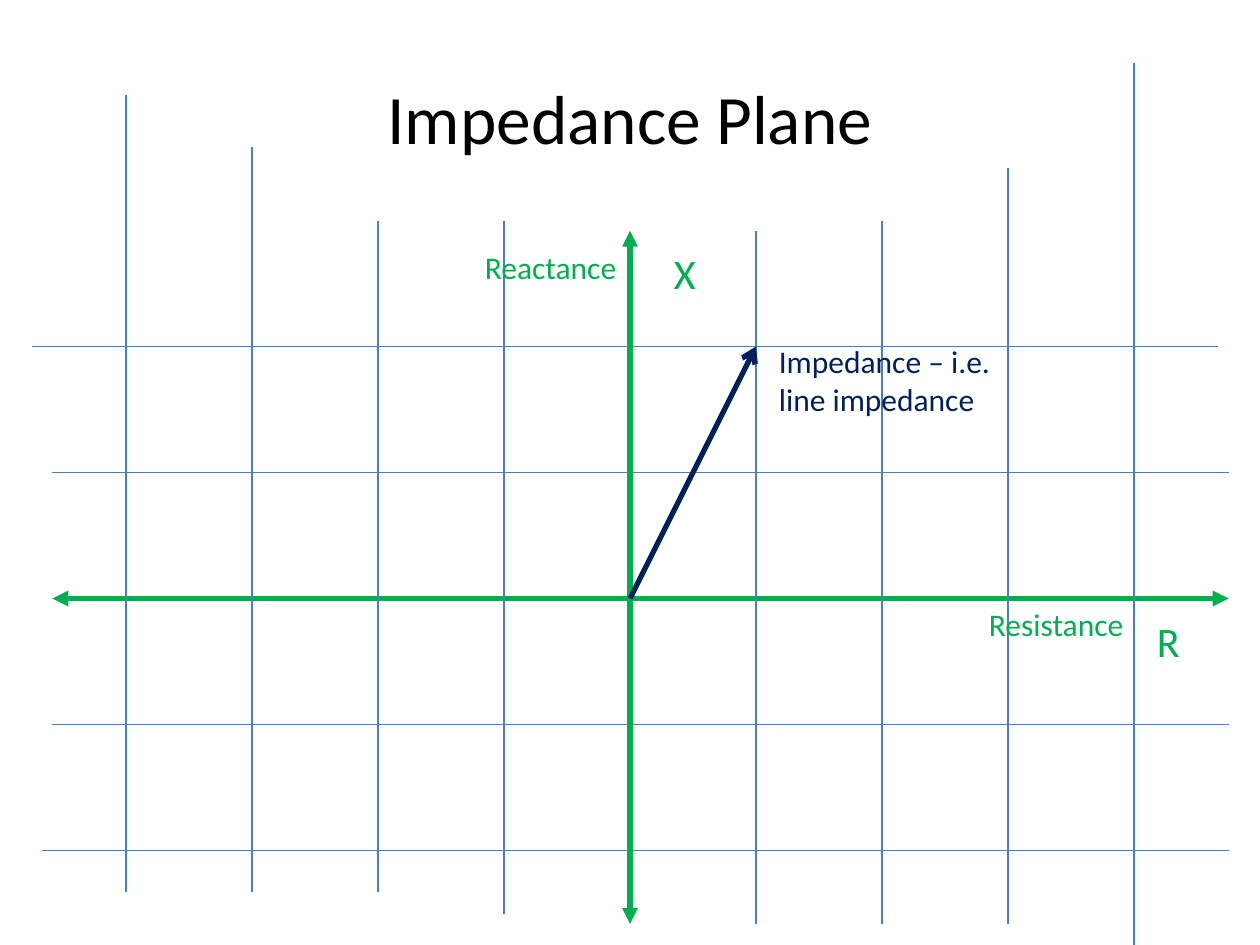
from lxml import etree
from pptx import Presentation
from pptx.dml.color import RGBColor
from pptx.enum import shapes, text
from pptx.oxml import ns
from pptx.util import Pt

GREEN, BLUE, NAVY, BLACK = "00B050", "4B7EBC", "002060", "000000"
CELL = 72
ORIGIN_X, ORIGIN_Y = 5 * CELL, 4.75 * CELL

presentation = Presentation()
presentation.slide_width, presentation.slide_height = Pt(720), Pt(540)
slide = presentation.slides.add_slide(presentation.slide_layouts[6])


def color(hex_string):
    return RGBColor.from_string(hex_string)


def add_line(start, end, line_color, width, **arrowheads):
    """Draw a straight line; arrowheads maps headEnd / tailEnd to a type."""
    line = slide.shapes.add_connector(
        shapes.MSO_CONNECTOR.STRAIGHT, *map(Pt, (*start, *end)))
    line.line.color.rgb = color(line_color)
    line.line.width = Pt(width)
    outline = line.line._get_or_add_ln()
    for tag, kind in arrowheads.items():
        etree.SubElement(outline, ns.qn(f"a:{tag}"), type=kind)
    etree.SubElement(line._element.spPr, ns.qn("a:effectLst"))


axis_style = dict(line_color=GREEN, width=3, headEnd="triangle", tailEnd="triangle")
grid_style = dict(line_color=BLUE, width=0.75)

# Horizontal lines, one cell apart: left and right ends
row_ends = [(18, 696), (30, 702), (30, 702), (30, 702), (24, 702)]
for row, (left, right) in enumerate(row_ends):
    y = ORIGIN_Y + (row - 2) * CELL
    add_line((right, y), (left, y), **(axis_style if y == ORIGIN_Y else grid_style))

# Vertical lines, one cell apart: top and bottom ends
column_ends = [(54, 510), (84, 510), (126, 510), (126, 522), (132, 528),
               (132, 528), (126, 528), (96, 528), (36, 540)]
for column, (top, bottom) in enumerate(column_ends, start=1):
    x = column * CELL
    add_line((x, top), (x, bottom), **(axis_style if x == ORIGIN_X else grid_style))

# Impedance vector: one cell right, two cells up
add_line((ORIGIN_X, ORIGIN_Y), (ORIGIN_X + CELL, ORIGIN_Y - 2 * CELL),
         NAVY, 3, tailEnd="arrow")

# Text, left, top, width, height, size, color
labels = [
    ("Impedance Plane", 210, 21.6, 300, 90, 39.6, BLACK),
    ("R", 654, 348, 30, 36, 24, GREEN),
    ("X", 378, 138, 30, 36, 24, GREEN),
    ("Resistance", 558, 342, 102, 29, 18, GREEN),
    ("Reactance", 270, 138, 102, 29, 18, GREEN),
    ("Impedance – i.e. line impedance", 438, 192, 150, 51, 18, NAVY),
]
for wording, left, top, width, height, size, text_color in labels:
    is_title = text_color == BLACK
    frame = slide.shapes.add_textbox(*map(Pt, (left, top, width, height))).text_frame
    frame.word_wrap = True
    frame.vertical_anchor = text.MSO_ANCHOR.MIDDLE if is_title else text.MSO_ANCHOR.TOP
    paragraph = frame.paragraphs[0]
    paragraph.alignment = text.PP_ALIGN.CENTER if is_title else text.PP_ALIGN.LEFT
    run = paragraph.add_run()
    run.text = wording
    for name, value in {"name": "Calibri", "size": Pt(size)}.items():
        setattr(run.font, name, value)
    run.font.color.rgb = color(text_color)

presentation.save("out.pptx")
